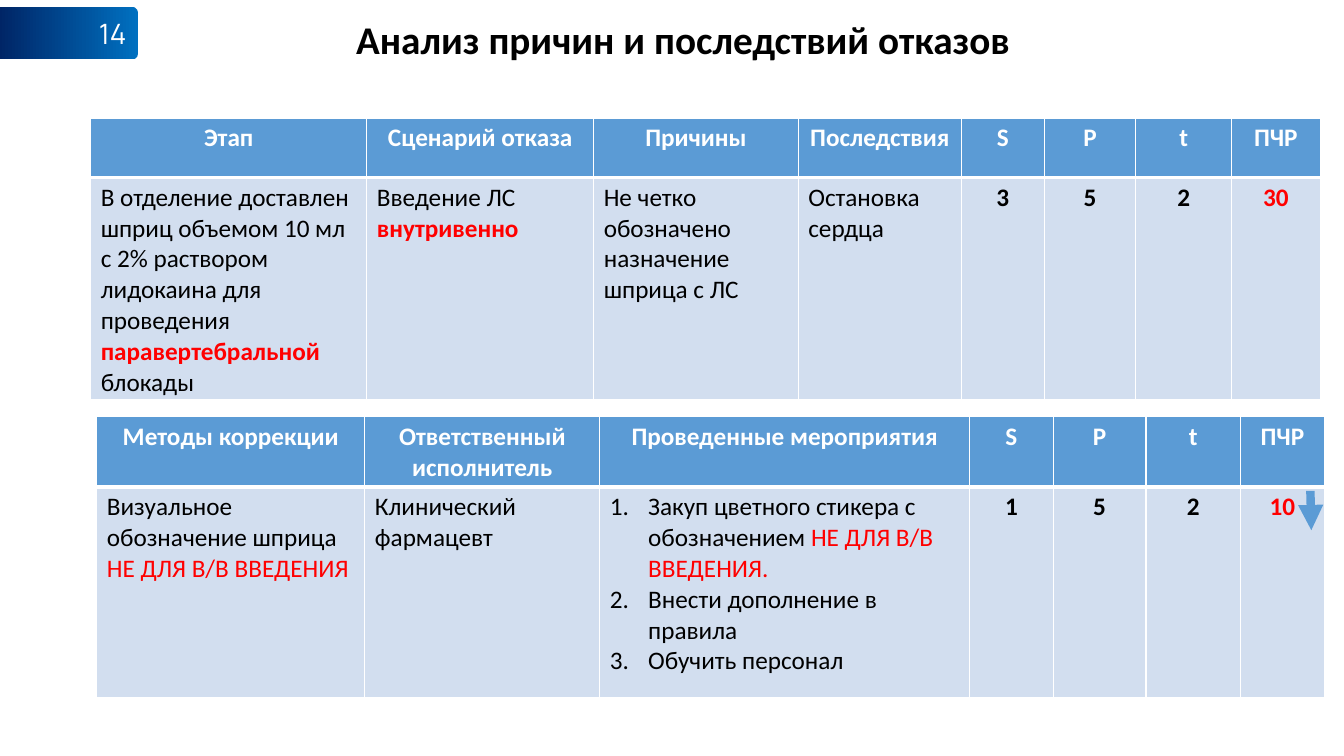
import pptx
import pptx.util
import pptx.dml.color
import pptx.enum.shapes
import pptx.enum.text
import pptx.oxml.ns
import lxml.etree

RGB = pptx.dml.color.RGBColor
WHITE = RGB(255, 255, 255)
BLACK = RGB(0, 0, 0)
RED = RGB(255, 0, 0)
BLUE = RGB(0x5B, 0x9B, 0xD5)
PALE = RGB(0xD2, 0xDE, 0xEF)
SKY = RGB(0, 0x70, 0xC0)
NAVY = RGB(0, 0x20, 0x60)
ALIGN = pptx.enum.text.PP_ALIGN
MIDDLE = pptx.enum.text.MSO_ANCHOR.MIDDLE
SHAPE = pptx.enum.shapes.MSO_SHAPE
LINK = pptx.enum.shapes.MSO_CONNECTOR
Pt = pptx.util.Pt
qn = pptx.oxml.ns.qn
sub = lxml.etree.SubElement

deck = pptx.Presentation()
deck.slide_width = pptx.util.Inches(13.33)
deck.slide_height = pptx.util.Inches(7.5)
slide = deck.slides.add_slide(deck.slide_layouts[6])
shapes = slide.shapes
COL, ROW = deck.slide_width / 100, deck.slide_height / 100


def grid(*spots):
    return [round(spot * (ROW if i % 2 else COL)) for i, spot in enumerate(spots)]


def style(para, size, color, bold, align, face="Calibri"):
    para.alignment = align
    font = para.font
    font.name, font.size, font.bold = face, Pt(size), bold
    font.color.rgb = color


title = shapes.add_textbox(*grid(19.5, 0, 62.62, 11.07)).text_frame
title.word_wrap = True
title.vertical_anchor = MIDDLE
title.text = "Анализ причин и последствий отказов"
style(title.paragraphs[0], 28, BLACK, True, ALIGN.CENTER)
title.paragraphs[0].line_spacing = 0.9

RISKS = [
    ["Этап", "Сценарий отказа", "Причины", "Последствия", "S", "P", "t", "ПЧР"],
    ["В отделение доставлен шприц объемом 10 мл с 2% раствором лидокаина "
     "для проведения |паравертебральной| блокады",
     "Введение ЛС |внутривенно", "Не четко обозначено назначение шприца с ЛС",
     "Остановка сердца", "3", "5", "2", "|30"],
]
FIXES = [
    ["Методы коррекции", "Ответственный исполнитель", "Проведенные мероприятия",
     "S", "P", "t", "ПЧР"],
    ["Визуальное обозначение шприца |НЕ ДЛЯ В/В ВВЕДЕНИЯ", "Клинический фармацевт",
     "Закуп цветного стикера с обозначением |НЕ ДЛЯ В/В ВВЕДЕНИЯ.\n"
     "Внести дополнение в правила\nОбучить персонал", "1", "5", "2", "|10"],
]
TABLES = [
    (RISKS, 6.75, 15.6, [20.55, 16.88, 15.22, 12.15, 6.15, 6.82, 7.12, 6.6], True),
    (FIXES, 7.2, 55.07, [19.95, 17.48, 27.52, 6.22, 6.9, 7.05, 6.22], False),
]
HIGH = [7.87, 27.87]

for data, left, top, wide, strong in TABLES:
    place = grid(left, top, sum(wide), sum(HIGH))
    table = shapes.add_table(len(data), len(wide), *place).table
    table.horz_banding = False
    for column, width in zip(table.columns, wide):
        column.width = round(width * COL)
    for r, line in enumerate(data):
        table.rows[r].height = round(HIGH[r] * ROW)
        head = r == 0
        for c, text in enumerate(line):
            cell = table.cell(r, c)
            cell.fill.solid()
            cell.fill.fore_color.rgb = BLUE if head else PALE
            props = cell._tc.get_or_add_tcPr()
            for i, side in enumerate("LRTB"):
                thick = 3 if head and side == "B" or not head and side == "T" else 1
                edge = lxml.etree.Element(qn("a:ln" + side), w=str(Pt(thick)))
                paint = sub(edge, qn("a:solidFill"))
                sub(paint, qn("a:srgbClr"), val=str(WHITE))
                props.insert(i, edge)
            score = text.strip("|").isdigit()
            items = text.split("\n")
            frame = cell.text_frame
            for n, item in enumerate(items):
                para = frame.add_paragraph() if n else frame.paragraphs[0]
                style(para, 18, WHITE if head else BLACK, head or score,
                      ALIGN.CENTER if head or score else ALIGN.LEFT)
                for k, part in enumerate(item.split("|")):
                    if part:
                        run = para.add_run()
                        run.text = part
                        if k % 2:
                            run.font.color.rgb = RED
                            run.font.bold = strong or score
                if len(items) > 1:
                    form = para._p.get_or_add_pPr()
                    dent = pptx.util.Inches(0.38)
                    form.set("marL", str(dent))
                    form.set("indent", str(-dent))
                    mark = lxml.etree.Element(qn("a:buAutoNum"), type="arabicPeriod")
                    form.insert(0, mark)

arrow = shapes.add_connector(LINK.STRAIGHT, *grid(97.5, 64.93, 97.57, 70.13))
arrow.line.color.rgb = BLUE
arrow.line.width = Pt(6)
sub(arrow.line._get_or_add_ln(), qn("a:tailEnd"), type="triangle")
sub(arrow._element.spPr, qn("a:effectLst"))

badge = shapes.add_shape(SHAPE.ROUNDED_RECTANGLE, *grid(-0.75, 0.93, 11.02, 6.93))
badge.adjustments[0] = 0.108
badge.shadow.inherit = False
badge.line.fill.background()
badge.fill.gradient()
badge.fill.gradient_angle = 180
for stop, color, spot in zip(badge.fill.gradient_stops, (SKY, NAVY), (0, 1)):
    stop.color.rgb = color
    stop.position = spot
badge.text_frame.vertical_anchor = MIDDLE
badge.text_frame.text = "14"
style(badge.text_frame.paragraphs[0], 20, WHITE, False, ALIGN.RIGHT, "Manrope")

deck.save("out.pptx")
